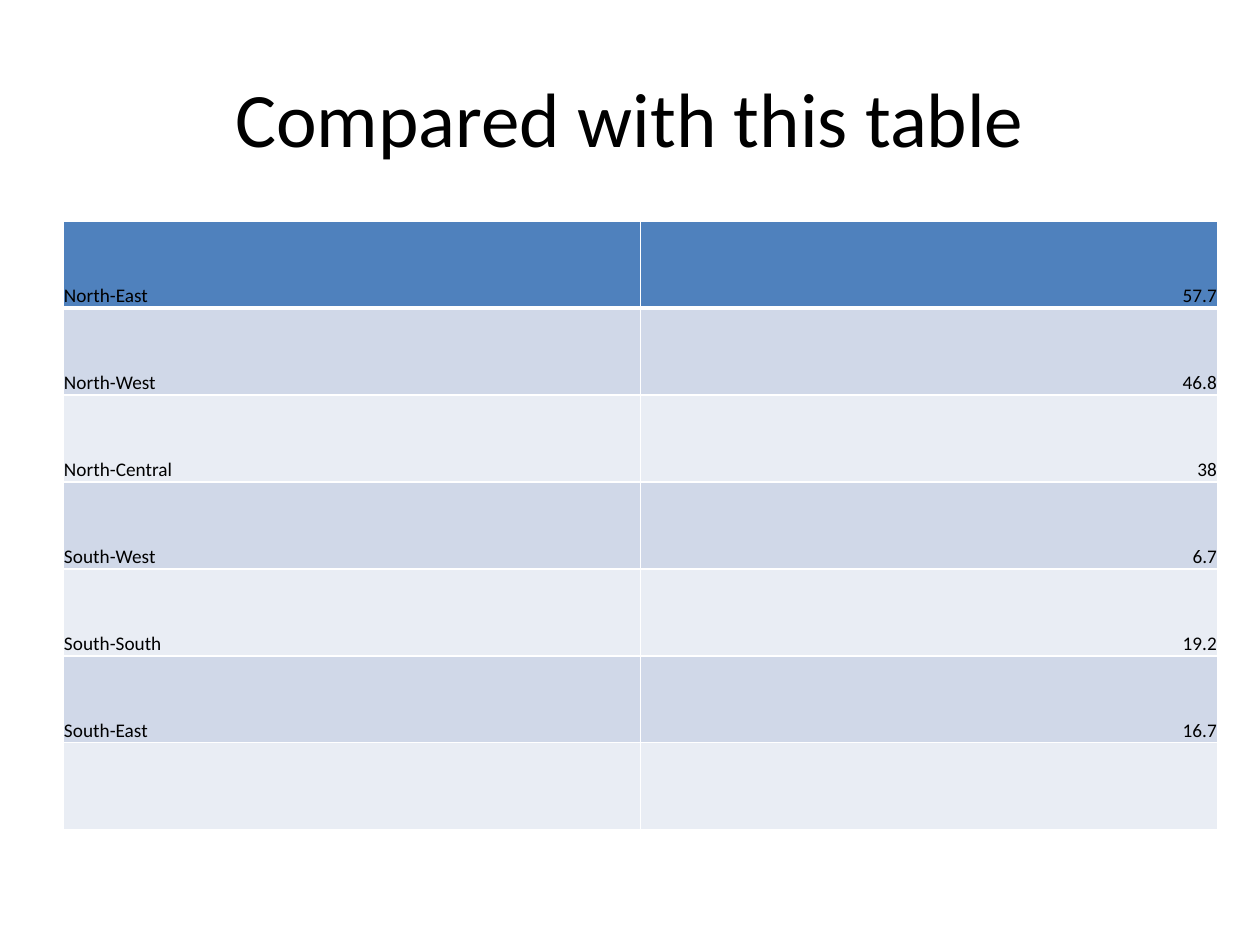
from lxml import etree
from pptx import Presentation
from pptx import util as u
from pptx.dml.color import RGBColor
from pptx.enum import text
from pptx.oxml import ns

SCALE = 914400 / 126
FONT = "Calibri"
COLORS = {
    "text": "000000",
    "header": "4F81BD",
    "band_dark": "D0D8E8",
    "band_light": "E9EDF4",
    "border": "FFFFFF",
}
REGIONS = [
    ("North-East", "57.7"),
    ("North-West", "46.8"),
    ("North-Central", "38"),
    ("South-West", "6.7"),
    ("South-South", "19.2"),
    ("South-East", "16.7"),
    ("", ""),
]


def px(length):
    return u.Emu(round(length * SCALE))


def color(name):
    return RGBColor.from_string(COLORS[name])


def write(paragraph, wording, size, alignment):
    paragraph.alignment = alignment
    run = paragraph.add_run()
    run.text = wording
    run.font.name = FONT
    run.font.size = u.Pt(size)
    run.font.color.rgb = color("text")


def add_title(slide, box, wording):
    shape = slide.shapes.add_textbox(*map(px, box))
    frame = shape.text_frame
    frame.word_wrap = True
    frame.vertical_anchor = text.MSO_ANCHOR.MIDDLE
    write(frame.paragraphs[0], wording, 44, text.PP_ALIGN.CENTER)


def set_borders(cell, widths):
    properties = cell._tc.get_or_add_tcPr()
    for index, (side, width) in enumerate(widths.items()):
        line = etree.Element(ns.qn(f"a:ln{side}"), w=str(u.Pt(width)))
        fill = etree.SubElement(line, ns.qn("a:solidFill"))
        etree.SubElement(fill, ns.qn("a:srgbClr"), val=COLORS["border"])
        properties.insert(index, line)


def add_region_table(slide, box, rows):
    shape = slide.shapes.add_table(len(rows), len(rows[0]), *map(px, box))
    table = shape.table
    alignments = (text.PP_ALIGN.LEFT, text.PP_ALIGN.RIGHT)
    for row_index, row in enumerate(rows):
        band = "band_dark" if row_index % 2 else "band_light"
        fill_name = band if row_index else "header"
        widths = {
            "L": 1,
            "R": 1,
            "T": 3 if row_index == 1 else 1,
            "B": 3 if row_index == 0 else 1,
        }
        for column_index, wording in enumerate(row):
            cell = table.cell(row_index, column_index)
            cell.fill.solid()
            cell.fill.fore_color.rgb = color(fill_name)
            cell.vertical_anchor = text.MSO_ANCHOR.BOTTOM
            cell.margin_left = cell.margin_right = cell.margin_top = px(1)
            cell.margin_bottom = 0
            set_borders(cell, widths)
            if wording:
                paragraph = cell.text_frame.paragraphs[0]
                write(paragraph, wording, 11, alignments[column_index])


def main():
    presentation = Presentation()
    presentation.slide_width = px(1260)
    presentation.slide_height = px(945)
    slide = presentation.slides.add_slide(presentation.slide_layouts[6])
    add_title(slide, (63, 38, 1134, 157), "Compared with this table")
    add_region_table(slide, (63, 221, 1155, 609), REGIONS)
    presentation.save("out.pptx")


if __name__ == "__main__":
    main()
